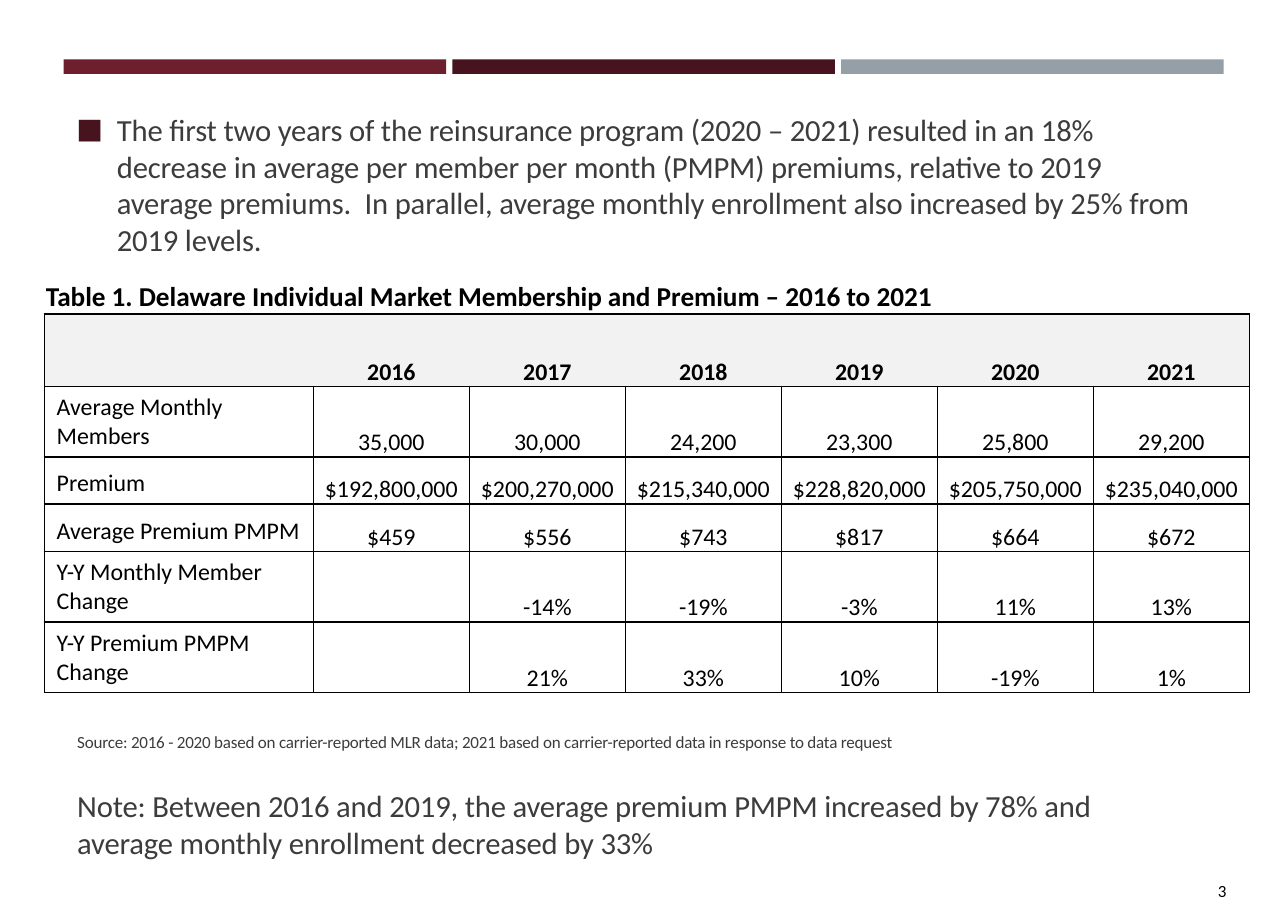
"""Build the reinsurance results slide with its membership and premium table."""
from dataclasses import dataclass

from lxml import etree
from pptx import Presentation
from pptx import util as u
from pptx.dml.color import RGBColor
from pptx.enum import shapes, text
from pptx.oxml import ns

Cm = u.Cm


@dataclass(frozen=True)
class Theme:
    font: str = "Calibri"
    ink: str = "3C3C3C"
    black: str = "000000"
    white: str = "FFFFFF"
    header: str = "F2F2F2"
    bullet: str = "47131E"
    bars: tuple = ("6E1F2D", "47131E", "959FA7")
    body: int = 18
    caption: int = 16
    cell: int = 14
    small: int = 10


THEME = Theme()
NO_GRID_STYLE = "{2D5ABB26-0587-4C30-8999-92F81FD0307C}"
CAPTION = "Table 1. Delaware Individual Market Membership and Premium – 2016 to 2021"
ROWS = [
    ["", "2016", "2017", "2018", "2019", "2020", "2021"],
    ["Average Monthly Members", "35,000", "30,000", "24,200", "23,300", "25,800", "29,200"],
    ["Premium", "$192,800,000", "$200,270,000", "$215,340,000",
     "$228,820,000", "$205,750,000", "$235,040,000"],
    ["Average Premium PMPM", "$459", "$556", "$743", "$817", "$664", "$672"],
    ["Y-Y Monthly Member Change", "", "-14%", "-19%", "-3%", "11%", "13%"],
    ["Y-Y Premium PMPM Change", "", "21%", "33%", "10%", "-19%", "1%"],
]
ROW_HEIGHTS = [1.5, 1.5, 1.46, 0.98, 0.98, 1.46, 1.46]
RESULT = ("The first two years of the reinsurance program (2020 – 2021) resulted in an 18% "
          "decrease in average per member per month (PMPM) premiums, relative to 2019 average "
          "premiums.  In parallel, average monthly enrollment also increased by 25% from "
          "2019 levels.")
SOURCE = ("Source: 2016 - 2020 based on carrier-reported MLR data; 2021 based on "
          "carrier-reported data in response to data request")
NOTE = ("Note: Between 2016 and 2019, the average premium PMPM increased by 78% and "
        "average monthly enrollment decreased by 33%")


def rgb(color):
    return RGBColor.from_string(color)


def set_text(tf, words, size, color, bold=False, spacing=None):
    tf.text = words
    tf.word_wrap = True
    p = tf.paragraphs[0]
    for r in p.runs:
        r.font.name, r.font.size, r.font.bold = THEME.font, u.Pt(size), bold
        r.font.color.rgb = rgb(color)
        if spacing is not None:
            r.font._element.set("spc", str(spacing))
    return p


def set_margins(item, side, bottom=0):
    item.margin_left = item.margin_top = item.margin_right = Cm(side)
    item.margin_bottom = Cm(bottom)


def add_bar(s, left, color):
    sp = s.shapes.add_shape(shapes.MSO_SHAPE.RECTANGLE, Cm(left), Cm(1.23), Cm(7.92), Cm(0.3))
    sp.shadow.inherit = False
    sp.fill.solid()
    sp.fill.fore_color.rgb = rgb(color)
    sp.line.fill.background()


def add_text(s, box, words, size, color):
    sp = s.shapes.add_textbox(*map(Cm, box))
    set_margins(sp.text_frame, 0)
    set_text(sp.text_frame, words, size, color, spacing=-10)


def fill_body(sp):
    sp.left, sp.top, sp.width, sp.height = Cm(1.52), Cm(2.29), Cm(23.24), Cm(3.07)
    tf = sp.text_frame
    set_margins(tf, 0)
    p = set_text(tf, RESULT, THEME.body, THEME.ink, spacing=-10)
    tf.auto_size = text.MSO_AUTO_SIZE.NONE
    p.space_before = u.Pt(0)
    pPr = p._p.get_or_add_pPr()
    pPr.set("marL", str(Cm(0.9)))
    pPr.set("indent", str(-Cm(0.84)))
    color = etree.SubElement(pPr, ns.qn("a:buClr"))
    etree.SubElement(color, ns.qn("a:srgbClr"), val=THEME.bullet)
    etree.SubElement(pPr, ns.qn("a:buSzPct"), val="92000")
    etree.SubElement(pPr, ns.qn("a:buFont"), typeface=THEME.font)
    etree.SubElement(pPr, ns.qn("a:buChar"), char="■")


def set_borders(cell, sides):
    tcPr = cell._tc.get_or_add_tcPr()
    for i, side in enumerate(sides):
        ln = etree.Element(ns.qn(f"a:ln{side}"), w=str(u.Pt(1)))
        fill = etree.SubElement(ln, ns.qn("a:solidFill"))
        etree.SubElement(fill, ns.qn("a:srgbClr"), val=THEME.black)
        tcPr.insert(i, ln)


def set_cell(cell, words, size, bold, centred, fill=None):
    p = set_text(cell.text_frame, words, size, THEME.black, bold)
    cell.vertical_anchor = text.MSO_ANCHOR.BOTTOM
    if centred:
        p.alignment = text.PP_ALIGN.CENTER
    if fill:
        cell.fill.solid()
        cell.fill.fore_color.rgb = rgb(fill)
    else:
        cell.fill.background()


def add_premium_table(s):
    count = len(ROWS[0])
    frame = s.shapes.add_table(len(ROW_HEIGHTS), count, Cm(0.92), Cm(5),
                               Cm(24.95), Cm(sum(ROW_HEIGHTS)))
    table = frame.table
    table.first_row = table.horz_banding = False
    table._tbl.tblPr.find(ns.qn("a:tableStyleId")).text = NO_GRID_STYLE
    for row, height in zip(table.rows, ROW_HEIGHTS):
        row.height = Cm(height)
    for c, column in enumerate(table.columns):
        column.width = Cm(3.23 if c else 5.57)

    caption = table.cell(0, 0)
    caption.merge(table.cell(0, count - 1))
    set_margins(caption, 0.03)
    set_cell(caption, CAPTION, THEME.caption, True, False)

    for i, values in enumerate(ROWS):
        head = i == 0
        for c, words in enumerate(values):
            cell = table.cell(i + 1, c)
            if c:
                set_margins(cell, 0.03 if head else 0)
            set_cell(cell, words, THEME.cell, head, c > 0,
                     THEME.header if head else THEME.white)
            left = "L" if c == 0 or not head else ""
            right = "R" if c == count - 1 or not head else ""
            set_borders(cell, left + right + "TB")


def main():
    prs = Presentation()
    prs.slide_width, prs.slide_height = Cm(26.67), Cm(19.05)
    s = prs.slides.add_slide(prs.slide_layouts[1])
    title = s.shapes.title._element
    title.getparent().remove(title)
    for i, color in enumerate(THEME.bars):
        add_bar(s, 1.32 + 8.05 * i, color)
    fill_body(s.placeholders[1])
    add_premium_table(s)
    add_text(s, (1.6, 15.15, 22.66, 0.45), SOURCE, THEME.small, THEME.ink)
    add_text(s, (1.6, 16.3, 22.66, 1.55), NOTE, THEME.body, THEME.ink)
    add_text(s, (25.22, 18.24, 0.3, 0.43), "3", THEME.small, THEME.black)
    prs.save("out.pptx")


if __name__ == "__main__":
    main()
